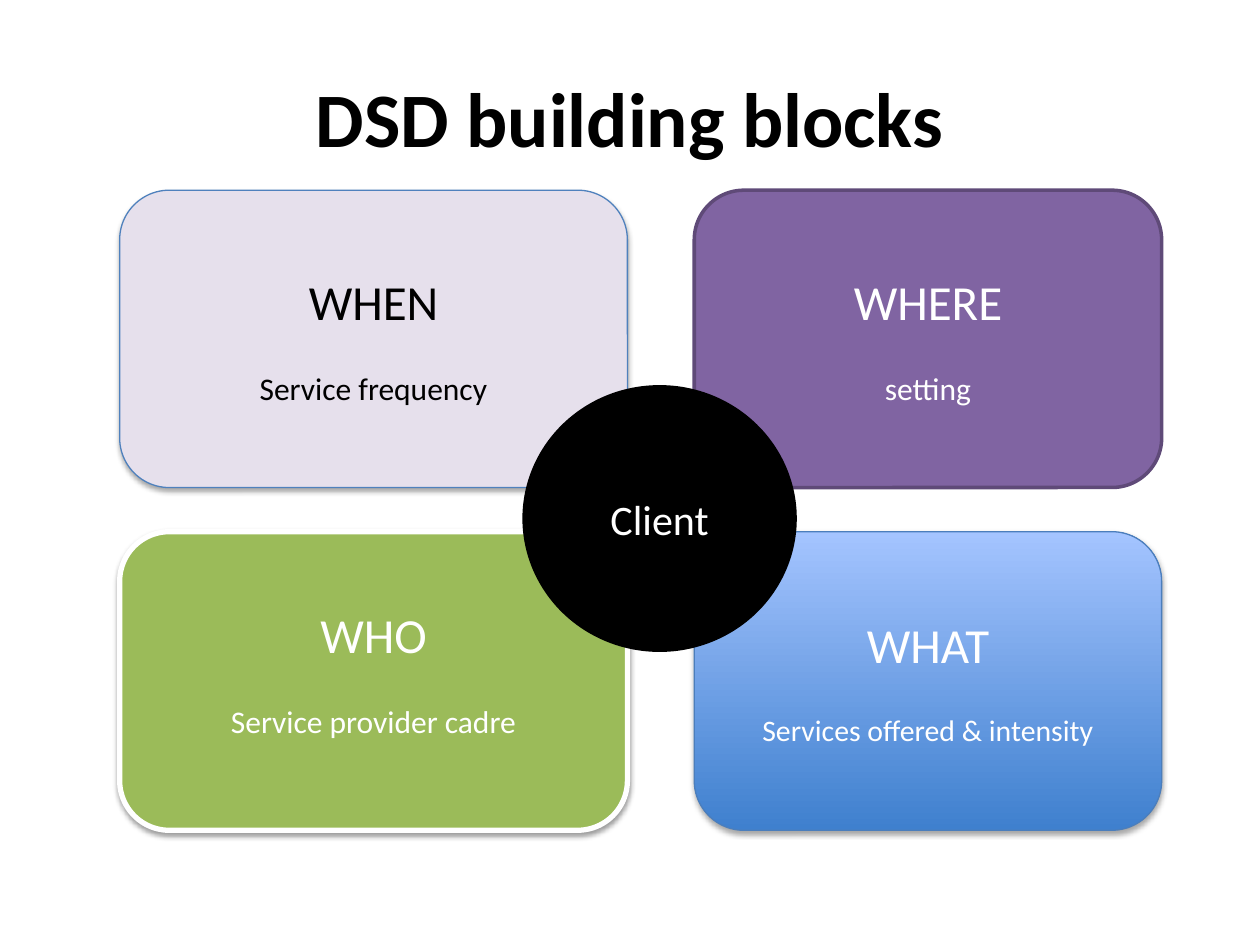
from lxml.etree import SubElement
from pptx import Presentation
from pptx.dml.color import RGBColor
from pptx.enum.shapes import MSO_SHAPE
from pptx.enum.text import MSO_ANCHOR, PP_ALIGN
from pptx.oxml.ns import qn
from pptx.util import Inches, Pt

HUES = {
    "black": "000000", "white": "FFFFFF", "lilac": "E6E0EC",
    "blue": "4F81BD", "purple": "8064A2", "plum": "5F4A78",
    "green": "9BBB59", "deep": "3F80CE", "pale": "A4C4FF", "edge": "4B7EBC",
}
TITLE = "DSD building blocks"
COLS = [(0.95, 4.03), (5.51, 3.71)]
ROWS = [(1.51, 2.36), (4.22, 2.37)]
BLOCKS = [
    dict(head="WHEN", note="Service frequency", fill="lilac", line="blue",
         width=0.75, ink="black", shade=(35, 1.8)),
    dict(head="WHERE", note="setting", fill="purple", line="plum", width=2),
    dict(head="WHO", note="Service provider cadre", fill="green", line="white",
         width=3, shade=(38, 1.6), foot=0.19),
    dict(head="WHAT", note="Services offered & intensity",
         fill=("deep", "pale"), line="edge", width=0.75, size=17,
         shade=(35, 1.8)),
]


def tint(name):
    return RGBColor.from_string(HUES[name])


def write(para, text, size=18, ink="white", bold=False, gap=0):
    para.alignment = PP_ALIGN.CENTER
    para.space_before = Pt(gap)
    run = para.add_run()
    run.text = text
    font = run.font
    font.name, font.size, font.bold = "Calibri", Pt(size), bold
    font.color.rgb = tint(ink)


def cast(shape, alpha, dist):
    list_ = shape._element.spPr.find(qn("a:effectLst"))
    outer = SubElement(list_, qn("a:outerShdw"), blurRad=str(Pt(3.1)),
                       dist=str(Pt(dist)), dir="5400000", rotWithShape="0")
    hue = SubElement(outer, qn("a:srgbClr"), val=HUES["black"])
    SubElement(hue, qn("a:alpha"), val=str(alpha * 1000))


def draw(slide, kind, box, fill, line, width):
    shape = slide.shapes.add_shape(kind, *map(Inches, box))
    if isinstance(fill, tuple):
        shape.fill.gradient()
        shape.fill.gradient_angle = 90
        for stop, name, spot in zip(shape.fill.gradient_stops, fill, (0, 1)):
            stop.color.rgb = tint(name)
            stop.position = spot
    else:
        shape.fill.solid()
        shape.fill.fore_color.rgb = tint(fill)
    shape.line.color.rgb = tint(line)
    shape.line.width = Pt(width)
    shape.shadow.inherit = False
    shape.text_frame.vertical_anchor = MSO_ANCHOR.MIDDLE
    return shape


def main():
    deck = Presentation()
    deck.slide_width, deck.slide_height = Inches(10), Inches(7.5)
    slide = deck.slides.add_slide(deck.slide_layouts[5])

    title = slide.shapes.title
    title.left, title.top = Inches(0.5), Inches(0.3)
    title.width, title.height = Inches(9), Inches(1.25)
    title.text_frame.vertical_anchor = MSO_ANCHOR.MIDDLE
    write(title.text_frame.paragraphs[0], TITLE, size=44, ink="black", bold=True)

    spots = [(x, y, w, h) for y, h in ROWS for x, w in COLS]
    for block, box in zip(BLOCKS, spots):
        shape = draw(slide, MSO_SHAPE.ROUNDED_RECTANGLE, box,
                     block["fill"], block["line"], block["width"])
        if "shade" in block:
            cast(shape, *block["shade"])
        frame = shape.text_frame
        frame.margin_bottom = Inches(block.get("foot", 0.05))
        ink = block.get("ink", "white")
        write(frame.paragraphs[0], block["head"], size=28, ink=ink)
        write(frame.add_paragraph(), block["note"],
              size=block.get("size", 18), ink=ink, gap=22)

    hub = draw(slide, MSO_SHAPE.OVAL, (4.16, 3.07, 2.15, 2.09),
               "black", "black", 2)
    write(hub.text_frame.paragraphs[0], "Client", size=24)
    deck.save("out.pptx")


if __name__ == "__main__":
    main()
